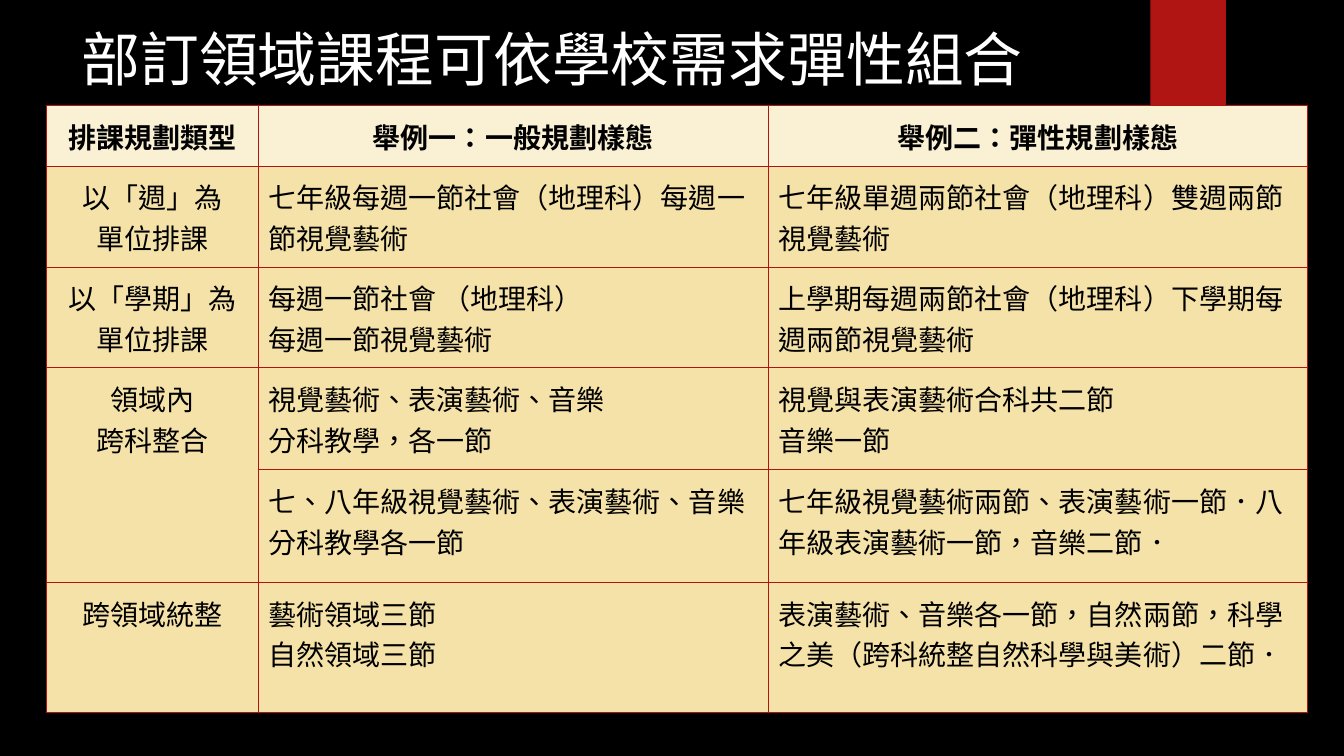
"""Build the slide on flexible combinations of curriculum domains."""
from lxml.etree import SubElement
from pptx import Presentation
from pptx.dml.color import RGBColor
from pptx.enum.shapes import MSO_SHAPE as Shape
from pptx.enum.text import MSO_ANCHOR as Anchor, PP_ALIGN as Align
from pptx.oxml.ns import qn
from pptx.util import Inches, Pt

BLACK, WHITE, RED = "000000", "FFFFFF", "B01513"
HEADER_FILL, BODY_FILL = "FAF1D4", "F5E2A9"
CHINESE_FONT, BODY_FONT = "Noto Sans CJK SC", "TeX Gyre Adventor"
COLUMN_WIDTHS = [2.1, 5.06, 5.35]
ROW_HEIGHTS = [0.6, 1.0, 1.0, 1.01, 1.12, 1.29]
ROWS = [
    [["排課規劃類型"], ["舉例一：一般規劃樣態"], ["舉例二：彈性規劃樣態"]],
    [["以「週」為", "單位排課"],
     ["七年級每週一節社會（地理科）每週一節視覺藝術"],
     ["七年級單週兩節社會（地理科）雙週兩節視覺藝術"]],
    [["以「學期」為單位排課"],
     ["每週一節社會 （地理科）", "每週一節視覺藝術"],
     ["上學期每週兩節社會（地理科）下學期每週兩節視覺藝術"]],
    [["領域內", "跨科整合"],
     ["視覺藝術、表演藝術、音樂", "分科教學，各一節"],
     ["視覺與表演藝術合科共二節", "音樂一節"]],
    [[],
     ["七、八年級視覺藝術、表演藝術、音樂分科教學各一節"],
     ["七年級視覺藝術兩節、表演藝術一節．八年級表演藝術一節，音樂二節．"]],
    [["跨領域統整"],
     ["藝術領域三節", "自然領域三節"],
     ["表演藝術、音樂各一節，自然兩節，科學之美（跨科統整自然科學與美術）二節．"]],
]


def paint(color_format, color):
    color_format.rgb = RGBColor.from_string(color)


def add_span(para, text, size, font, color, bold=False):
    span = para.add_run()
    span.text = text
    span.font.size = Pt(size)
    span.font.name = font
    span.font.bold = bold
    paint(span.font.color, color)
    properties = span.font._element
    properties.set("lang", "zh-TW")
    SubElement(properties, qn("a:ea")).set("typeface", CHINESE_FONT)


deck = Presentation()
deck.slide_width, deck.slide_height = Inches(13.33), Inches(7.5)
page = deck.slides.add_slide(deck.slide_layouts[6])
page.background.fill.solid()
paint(page.background.fill.fore_color, BLACK)

ribbon = page.shapes.add_shape(Shape.RECTANGLE, Inches(11.41), 0, Inches(0.75), Inches(1.25))
ribbon.shadow.inherit = False
ribbon.fill.solid()
paint(ribbon.fill.fore_color, RED)
ribbon.line.fill.background()

title = page.shapes.add_textbox(Inches(0.71), Inches(0.18), Inches(10.29), Inches(1.08))
title.text_frame.word_wrap = True
title.text_frame.vertical_anchor = Anchor.TOP
add_span(title.text_frame.paragraphs[0], "部訂領域課程可依學校需求彈性組合", 42, CHINESE_FONT, WHITE)

table = page.shapes.add_table(
    len(ROWS), len(COLUMN_WIDTHS), Inches(0.46), Inches(1.05),
    Inches(sum(COLUMN_WIDTHS)), Inches(sum(ROW_HEIGHTS))).table
for column, width in zip(table.columns, COLUMN_WIDTHS):
    column.width = Inches(width)
for row, height in zip(table.rows, ROW_HEIGHTS):
    row.height = Inches(height)
table.cell(3, 0).merge(table.cell(4, 0))

for row_index, row_texts in enumerate(ROWS):
    is_header = row_index == 0
    for column_index, lines in enumerate(row_texts):
        cell = table.cell(row_index, column_index)
        cell.margin_left = cell.margin_right = Inches(0.1)
        cell.margin_top = cell.margin_bottom = Inches(0.1)
        cell.vertical_anchor = Anchor.TOP
        cell_properties = cell._tc.get_or_add_tcPr()
        for side in ("a:lnL", "a:lnR", "a:lnT", "a:lnB"):
            border = SubElement(cell_properties, qn(side), w=str(Pt(0.75)))
            border_fill = SubElement(border, qn("a:solidFill"))
            SubElement(border_fill, qn("a:srgbClr"), val=RED)
        cell.fill.solid()
        paint(cell.fill.fore_color, HEADER_FILL if is_header else BODY_FILL)
        for line_index, line in enumerate(lines):
            frame = cell.text_frame
            para = frame.add_paragraph() if line_index else frame.paragraphs[0]
            para.alignment = Align.CENTER if is_header or column_index == 0 else Align.LEFT
            add_span(para, line, 20, CHINESE_FONT if is_header else BODY_FONT, BLACK, is_header)

deck.save("out.pptx")
